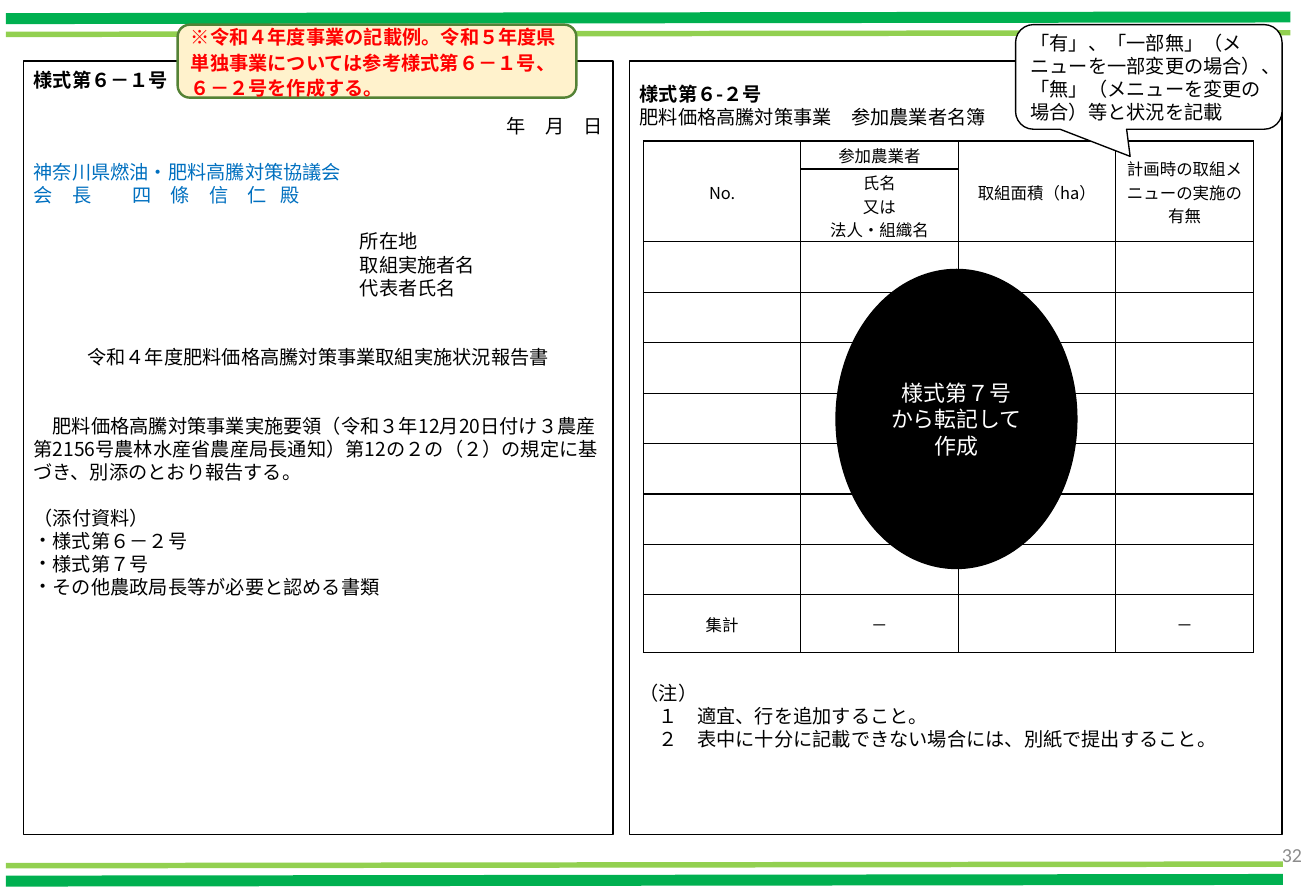
from dataclasses import dataclass

from lxml.etree import SubElement
from pptx import Presentation
from pptx.dml.color import RGBColor
from pptx.enum.shapes import MSO_CONNECTOR as Connector, MSO_SHAPE as Shape
from pptx.enum.text import MSO_ANCHOR as Anchor, MSO_AUTO_SIZE as AutoSize, PP_ALIGN as Align
from pptx.oxml import parse_xml
from pptx.oxml.ns import nsdecls, qn
from pptx.util import Pt


@dataclass(frozen=True)
class Theme:
    black: str = "000000"
    white: str = "FFFFFF"
    blue: str = "0070C0"
    red: str = "FF0000"
    gray: str = "8C8C8C"
    green: str = "00B050"
    lime: str = "92D050"
    cream: str = "FFF2CC"
    moss: str = "548235"
    font: str = "Noto Sans CJK JP"
    latin: str = "Calibri"
    body: float = 14
    cell: float = 12
    stamp: float = 16
    number: float = 14.5
    leading: float = 16.8


THEME = Theme()


@dataclass(frozen=True)
class Box:
    left: float
    top: float
    width: float
    height: float

    def inner(self, left, top, width, height):
        return Box(self.left + left, self.top + top, width, height)

    def lengths(self):
        return Pt(self.left), Pt(self.top), Pt(self.width), Pt(self.height)


@dataclass(frozen=True)
class Line:
    text: str
    gap: int = 0
    align: Align = Align.LEFT
    margin: float = 0
    indent: float = 0
    bold: bool = False
    color: str = THEME.black
    bullet: str = ""
    tabs: tuple = ()


def rgb(color):
    return RGBColor.from_string(color)


def write(frame, lines, size=THEME.body, leading=THEME.leading, font=THEME.font):
    for index, line in enumerate(lines):
        paragraph = frame.add_paragraph() if index else frame.paragraphs[0]
        paragraph.alignment = line.align
        paragraph.space_before = Pt(line.gap * THEME.leading)
        paragraph.space_after = Pt(0)
        paragraph.line_spacing = Pt(leading) if leading else 1.0
        props = paragraph._p.get_or_add_pPr()
        props.set("marL", str(Pt(line.margin)))
        props.set("indent", str(Pt(line.indent)))
        if line.bullet:
            SubElement(props, qn("a:buChar")).set("char", line.bullet)
        else:
            SubElement(props, qn("a:buNone"))
        if line.tabs:
            stops = SubElement(props, qn("a:tabLst"))
            for position in line.tabs:
                SubElement(stops, qn("a:tab"), pos=str(Pt(position)), algn="l")
        run = paragraph.add_run()
        run.text = line.text
        run.font.size = Pt(size)
        run.font.bold = line.bold
        run.font.name = font
        run.font.color.rgb = rgb(line.color)
        SubElement(run._r.get_or_add_rPr(), qn("a:ea")).set("typeface", THEME.font)


def set_frame(frame, anchor=Anchor.MIDDLE, top=3.6):
    frame.word_wrap = True
    frame.auto_size = AutoSize.NONE
    frame.vertical_anchor = anchor
    frame.margin_left = frame.margin_right = Pt(7.2)
    frame.margin_top, frame.margin_bottom = Pt(top), Pt(3.6)


def paint(shape, fill, line, weight=1):
    shape.fill.solid()
    shape.fill.fore_color.rgb = rgb(fill)
    shape.line.color.rgb = rgb(line)
    shape.line.width = Pt(weight)


def place(holder, box):
    holder.left, holder.top, holder.width, holder.height = box.lengths()


def form_panel(panel, box, lines, top):
    place(panel, box)
    paint(panel, THEME.white, THEME.black)
    set_frame(panel.text_frame, Anchor.TOP, top)
    write(panel.text_frame, lines)


def report_form(slide, box):
    em = THEME.body
    sender = 17 * em
    form_panel(slide.placeholders[1], box, [
        Line("様式第６－１号", bold=True),
        Line("年　月　日", gap=1, align=Align.RIGHT),
        Line("神奈川県燃油・肥料高騰対策協議会", gap=1, color=THEME.blue),
        Line("会　長\t四　條　信　仁\t殿", color=THEME.blue, tabs=(5 * em, 15 * em)),
        Line("所在地", gap=1, margin=sender),
        Line("取組実施者名", margin=sender),
        Line("代表者氏名", margin=sender),
        Line("肥料価格高騰対策事業実施要領（令和３年12月20日付け３農産第2156号農林水産省農産局長通知）"
             "第12の２の（２）の規定に基づき、別添のとおり報告する。", gap=5, indent=em),
        Line("（添付資料）", gap=1),
        *(Line(item, margin=em, indent=-em, bullet="・")
          for item in ("様式第６－２号", "様式第７号", "その他農政局長等が必要と認める書類")),
    ], top=5.4)
    title = slide.shapes.title
    place(title, box.inner(0, 204, box.width, 24))
    set_frame(title.text_frame)
    write(title.text_frame, [Line("令和４年度肥料価格高騰対策事業取組実施状況報告書", align=Align.CENTER)])
    slide.shapes._spTree.append(title._element)


def roster_form(slide, box):
    em = THEME.body
    form_panel(slide.placeholders[2], box, [
        Line("様式第６-２号", bold=True),
        Line("肥料価格高騰対策事業　参加農業者名簿"),
        Line("（注）", gap=24),
        Line("１\t適宜、行を追加すること。", margin=3 * em, indent=-2 * em),
        Line("２\t表中に十分に記載できない場合には、別紙で提出すること。", margin=3 * em, indent=-2 * em),
    ], top=15.7)
    roster_table(slide, box.inner(10, 58.3, 445.2, 373.4))
    callout(slide, slide.shapes, Shape.OVAL, box.inner(150.5, 152, 175.7, 218.2),
            [Line(text, align=Align.CENTER, color=THEME.white) for text in ("様式第７号", "から転記して作成")],
            THEME.black, THEME.black, size=THEME.stamp, leading=19.5)
    balloon = callout(slide, slide.shapes, Shape.ROUNDED_RECTANGULAR_CALLOUT,
                      box.inner(281.5, -26.6, 194.4, 76.3),
                      [Line("「有」、「一部無」（メニューを一部変更の場合）、「無」（メニューを変更の場合）等と状況を記載")],
                      THEME.white, THEME.black, font=THEME.latin)
    for index, value in enumerate((-0.07, 0.76, 0.17)):
        balloon.adjustments[index] = value


def border_cell(cell):
    props = cell._tc.get_or_add_tcPr()
    for index, side in enumerate(("lnL", "lnR", "lnT", "lnB")):
        props.insert(index, parse_xml(
            f'<a:{side} {nsdecls("a")} w="{Pt(1)}"><a:solidFill>'
            f'<a:srgbClr val="{THEME.black}"/></a:solidFill></a:{side}>'))


def roster_table(slide, box):
    widths = [114.8] * 3 + [100.8]
    heights = [20.4, 53.2] + [36.8] * 7 + [42.2]
    table = slide.shapes.add_table(len(heights), len(widths), *box.lengths()).table
    table.first_row = table.horz_banding = False
    for column, width in zip(table.columns, widths):
        column.width = Pt(width)
    for row, height in zip(table.rows, heights):
        row.height = Pt(height)
    for cell in table.iter_cells():
        cell.fill.background()
        border_cell(cell)
        cell.vertical_anchor = Anchor.MIDDLE
        cell.margin_left = cell.margin_right = cell.margin_top = Pt(0.7)
        cell.margin_bottom = Pt(0)
    for column in (0, 2, 3):
        table.cell(0, column).merge(table.cell(1, column))
    last = len(heights) - 1
    entries = {
        (0, 0): ["No."],
        (0, 1): ["参加農業者"],
        (0, 2): ["取組面積（ha）"],
        (0, 3): ["計画時の取組メニューの実施の", "有無"],
        (1, 1): ["氏名", "又は", "法人・組織名"],
        (last, 0): ["集計"],
        (last, 1): ["－"],
        (last, 3): ["－"],
    }
    for position, texts in entries.items():
        write(table.cell(*position).text_frame,
              [Line(text, align=Align.CENTER) for text in texts], THEME.cell, leading=None)


def callout(slide, shapes, kind, box, lines, fill, edge, weight=1, **style):
    bubble = shapes.add_shape(kind, *box.lengths())
    bubble.shadow.inherit = False
    paint(bubble, fill, edge, weight)
    set_frame(bubble.text_frame)
    write(bubble.text_frame, lines, **style)
    return bubble


def stripes(slide, box, bands):
    for offset, color, weight in bands:
        stripe = slide.shapes.add_connector(
            Connector.STRAIGHT, Pt(box.left), Pt(box.top + offset + 1.2),
            Pt(box.left + box.width), Pt(box.top + offset))
        stripe.line.color.rgb = rgb(color)
        stripe.line.width = Pt(weight)
        SubElement(stripe._element.spPr, qn("a:effectLst"))


def page_number(slide, box):
    number = slide.shapes.add_textbox(*box.lengths())
    set_frame(number.text_frame)
    write(number.text_frame, [Line("32", align=Align.RIGHT, color=THEME.gray)],
          THEME.number, leading=None, font=THEME.latin)


def main():
    deck = Presentation()
    deck.slide_width, deck.slide_height = Pt(960), Pt(652.3)
    slide = deck.slides.add_slide(deck.slide_layouts[3])
    thick, thin = (THEME.green, 8), (THEME.lime, 4)
    stripes(slide, Box(4.3, 12.4, 937, 12), [(0, *thick), (11.5, *thin)])
    stripes(slide, Box(4.3, 630.5, 931.5, 12), [(0, *thin), (11.2, *thick)])
    report_form(slide, Box(17.3, 44.6, 429.8, 564.5))
    roster_form(slide, Box(459.4, 44.6, 475.9, 564.5))
    callout(slide, slide.shapes, Shape.ROUNDED_RECTANGLE, Box(129.6, 18, 290.9, 53.3),
            [Line("※令和４年度事業の記載例。令和５年度県単独事業については参考様式第６－１号、６－２号を作成する。",
                  bold=True, color=THEME.red)], THEME.cream, THEME.moss, 1.75, leading=18.6)
    page_number(slide, Box(740.9, 609.1, 216, 28.8))
    deck.save("out.pptx")


if __name__ == "__main__":
    main()
